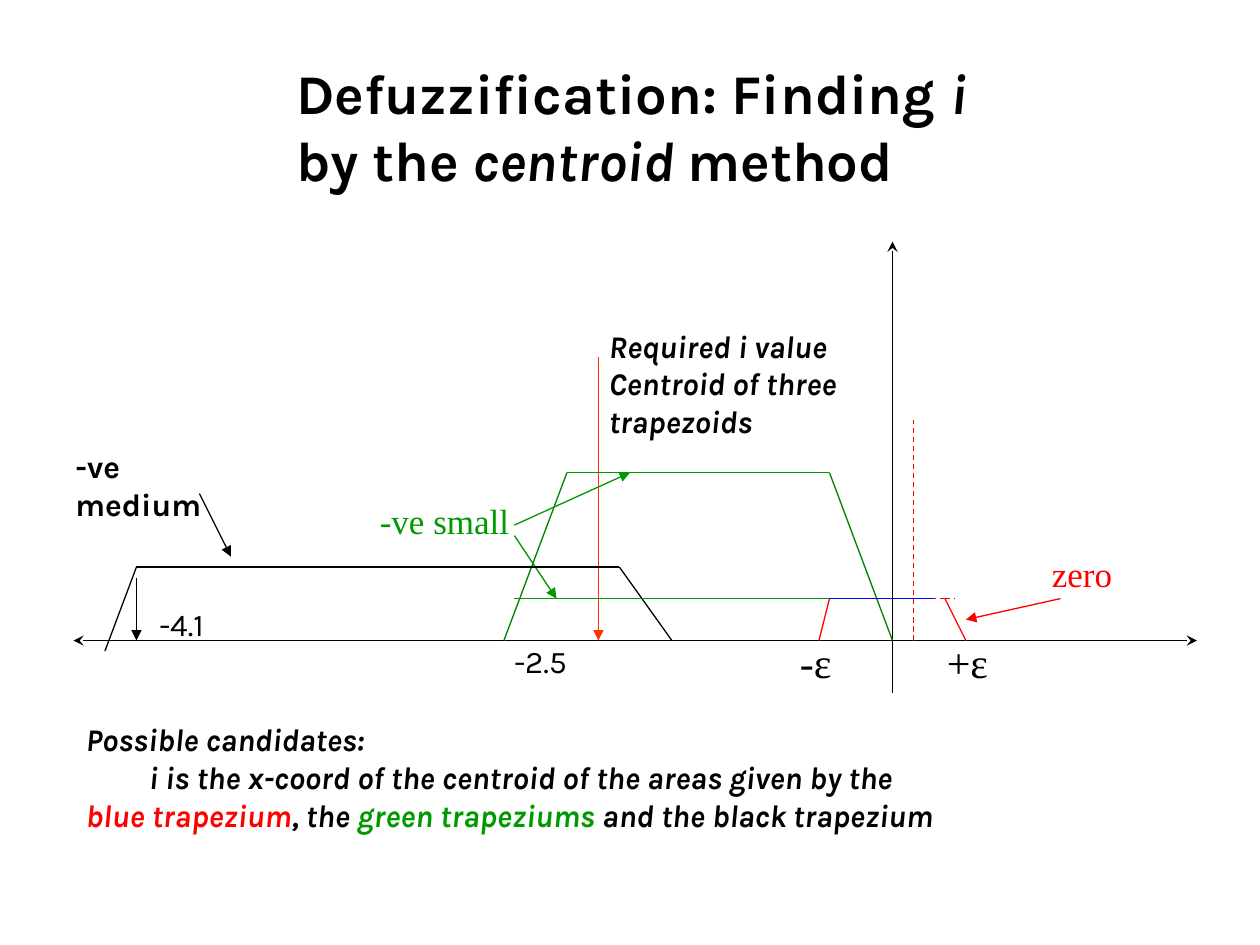
from pptx import Presentation
from pptx.dml.color import RGBColor
from pptx.enum import shapes
from pptx.oxml.ns import qn
from pptx.util import Cm, Pt
from lxml import etree

BLACK, RED, GREEN, LEAF = "000000", "FF0000", "008000", "009900"
SANS, SERIF = "Karla", "Times New Roman"

LINES = [
    (-78, 0, 29, 0, BLACK, {"headEnd": "stealth", "tailEnd": "stealth"}),
    (0, -38, 0, 5, BLACK, {"headEnd": "stealth"}),
    (-37, 0, -31, -16, GREEN, {}),
    (-6, -4, -7, 0, RED, {}),
    (5, -4, 7, 0, RED, {}),
    (-28, -27, -28, 0, "FF3300", {"tailEnd": "triangle"}),
    (0, 0, -6, -16, GREEN, {}),
    (2, 0, 2, -21, RED, {"prstDash": "dash"}),
    (-36, -4, 6, -4, RED, {"prstDash": "lgDash"}),
    (-21, 0, -26, -7, BLACK, {}),
    (-72, -7, -75, 1, BLACK, {}),
    (-72, -6, -72, 0, BLACK, {"tailEnd": "triangle"}),
    (-66, -14, -63, -8, BLACK, {"tailEnd": "triangle"}),
    (-36, -10, -32, -4, LEAF, {"tailEnd": "triangle"}),
    (-72, -7, -26, -7, BLACK, {}),
    (-36, -4, -1, -4, LEAF, {}),
    (-6, -4, 4, -4, "0000FF", {}),
    (16, -4, 7, -2, RED, {"tailEnd": "triangle"}),
    (-31, -16, -6, -16, LEAF, {}),
    (-36, -11, -25, -16, LEAF, {"tailEnd": "triangle"}),
]

LABELS = [
    (-10, -1, 7, 6, ["-ε"], 24, SERIF, BLACK, False, False),
    (4, -1, 7, 6, ["+ε"], 24, SERIF, BLACK, False, False),
    (-50, -14, 19, 5, ["-ve small"], 20, SERIF, LEAF, False, False),
    (14, -9, 10, 5, ["zero"], 20, SERIF, RED, False, False),
    (-71, -4, 8, 5, ["-4.1"], 18, SANS, BLACK, False, False),
    (-37.2, -0.5, 8, 5, ["-2.5"], 18, SANS, BLACK, False, False),
    (-79, -19, 15, 8, ["-ve medium"], 18, SANS, BLACK, True, False),
    (-28.2, -30.5, 28, 12,
     ["Required i value", "Centroid of three", "trapezoids"],
     18, SANS, BLACK, True, True),
]


def rgb(code):
    """Return the colour for a hex string."""
    return RGBColor.from_string(code)


def style(run, size, face, color, bold=False, slant=False):
    """Set the font of a run."""
    font = run.font
    font.size, font.name = Pt(size), face
    font.bold, font.italic = bold, slant
    font.color.rgb = rgb(color)


def write(slide, box, rows, size, face, bold=False):
    """Add a text box whose rows are lists of (text, colour, italic)."""
    frame = slide.shapes.add_textbox(*map(Cm, box)).text_frame
    frame.word_wrap = True
    for i, row in enumerate(rows):
        para = frame.add_paragraph() if i else frame.paragraphs[0]
        for words, color, slant in row:
            run = para.add_run()
            run.text = words
            style(run, size, face, color, bold, slant)


def draw(slide, ends, color, marks):
    """Add a thin line with its dash and arrowheads."""
    line = slide.shapes.add_connector(
        shapes.MSO_CONNECTOR.STRAIGHT, *map(Cm, ends))
    line.line.width = Pt(0.75)
    line.line.color.rgb = rgb(color)
    for tag, kind in marks.items():
        key = "val" if tag == "prstDash" else "type"
        etree.SubElement(line.line._get_or_add_ln(), qn("a:" + tag)).set(key, kind)
    etree.SubElement(line._element.spPr, qn("a:effectLst"))


def title(slide, box):
    """Write the heading."""
    rows = [
        [("Defuzzification: Finding ", BLACK, False), ("i", BLACK, True)],
        [("by the", BLACK, False), (" centroid ", BLACK, True),
         ("method", BLACK, False)],
    ]
    write(slide, box, rows, 32, SANS, True)


def plot(slide, box):
    """Draw the membership plot on a grid 107 units wide."""
    left, top, wide, _ = box
    unit = wide / 107
    zx, zy = left + 78 * unit, top + 38 * unit
    for ax, ay, bx, by, color, marks in LINES:
        ends = (zx + ax * unit, zy + ay * unit, zx + bx * unit, zy + by * unit)
        draw(slide, ends, color, marks)
    for x, y, w, h, rows, size, face, color, bold, slant in LABELS:
        area = (zx + x * unit, zy + y * unit, w * unit, h * unit)
        write(slide, area, [[(row, color, slant)] for row in rows],
              size, face, bold)


def note(slide, box):
    """Write the candidates below the plot."""
    rows = [
        [("Possible candidates:", BLACK, True)],
        [("\ti is the x-coord of the centroid of the areas given by the",
          BLACK, True)],
        [("blue trapezium", RED, True), (", the ", BLACK, True),
         ("green trapeziums ", LEAF, True),
         ("and the black trapezium", BLACK, True)],
    ]
    write(slide, box, rows, 18, SANS, True)


def main():
    """Build and save the slide."""
    deck = Presentation()
    deck.slide_width, deck.slide_height = Cm(25.4), Cm(19.05)
    slide = deck.slides.add_slide(deck.slide_layouts[6])
    title(slide, (5.72, 1.06, 15.24, 2.96))
    plot(slide, (1.48, 4.87, 22.65, 9.1))
    note(slide, (1.48, 14.39, 19.95, 3.3))
    deck.save("out.pptx")


if __name__ == "__main__":
    main()
